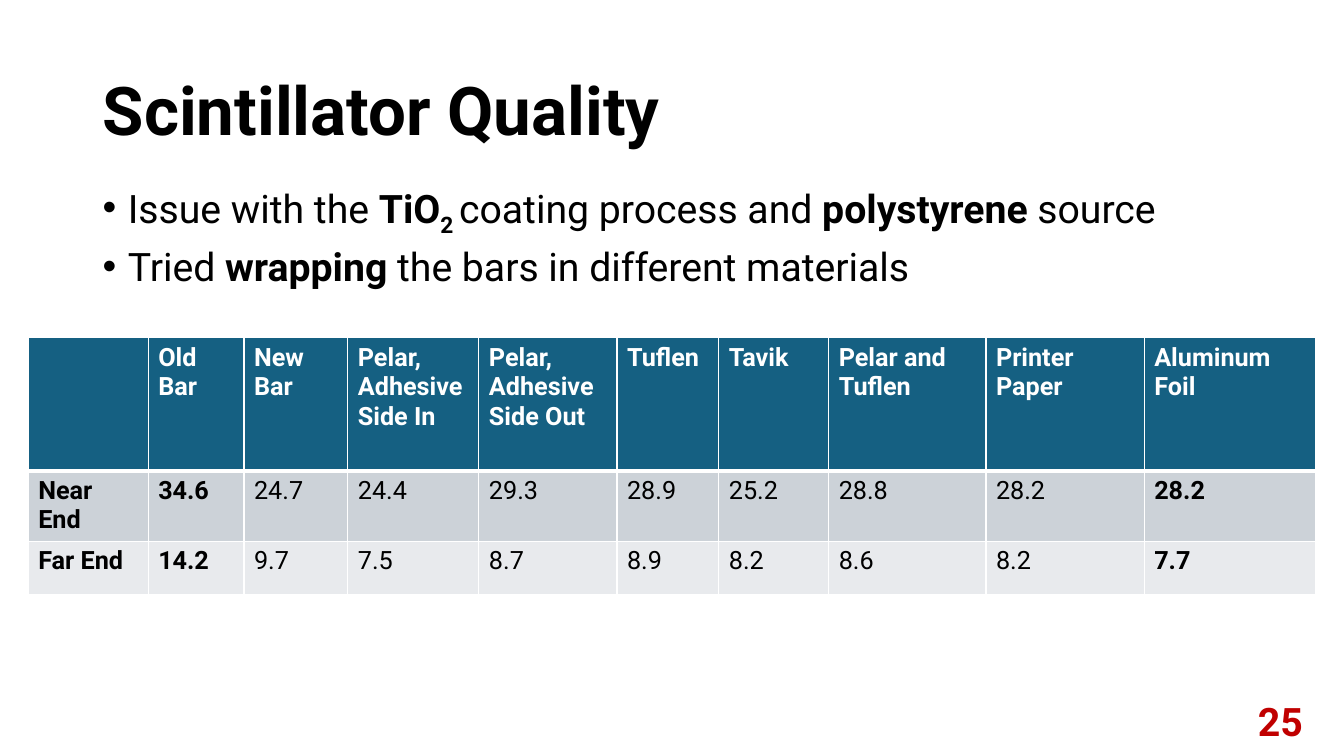
from lxml.etree import SubElement
from pptx import Presentation
from pptx.dml.color import RGBColor
from pptx.enum.text import MSO_ANCHOR, PP_ALIGN
from pptx.oxml.ns import qn
from pptx.util import Inches, Pt

BLACK = RGBColor(0x00, 0x00, 0x00)
WHITE = RGBColor(0xFF, 0xFF, 0xFF)
RED = RGBColor(0xC0, 0x00, 0x00)
TEAL = RGBColor(0x15, 0x60, 0x82)
GRAY = RGBColor(0xCC, 0xD2, 0xD8)
PALE = RGBColor(0xE8, 0xEA, 0xED)
FONT = "Roboto"
WIDE, HIGH = 13.33, 7.5
LEFT, SPAN = 0.92, 11.5

POINTS = [
    [("Issue with the ", ""), ("TiO", "bold"), ("2 ", "bold sub"),
     ("coating process and ", ""), ("polystyrene", "bold"), (" source", "")],
    [("Tried ", ""), ("wrapping", "bold"), (" the bars in different materials", "")],
]
ROWS = [
    ["", "Old Bar", "New Bar", "Pelar, Adhesive Side In", "Pelar, Adhesive Side Out",
     "Tuflen", "Tavik", "Pelar and Tuflen", "Printer Paper", "Aluminum Foil"],
    ["Near End", "34.6", "24.7", "24.4", "29.3", "28.9", "25.2", "28.8", "28.2", "28.2"],
    ["Far End", "14.2", "9.7", "7.5", "8.7", "8.9", "8.2", "8.6", "8.2", "7.7"],
]
COLS = [1.19, 0.95, 1.03, 1.3, 1.37, 1.01, 1.09, 1.56, 1.57, 1.7]
TALL = [1.32, 0.53, 0.53]
FILLS = [TEAL, GRAY, PALE]
STRONG = {0, 1, len(COLS) - 1}


def style(font, size, color, bold):
    """Set the face, size, colour and weight of a font."""
    font.name, font.size, font.bold = FONT, Pt(size), bold
    font.color.rgb = color


def add_title(slide, box):
    """Place the slide title in the box."""
    title = slide.shapes.title
    title.left, title.top, title.width, title.height = map(Inches, box)
    frame = title.text_frame
    frame.text = "Scintillator Quality"
    frame.vertical_anchor = MSO_ANCHOR.MIDDLE
    para = frame.paragraphs[0]
    para.alignment, para.line_spacing = PP_ALIGN.LEFT, 0.9
    style(para.runs[0].font, 48, BLACK, True)


def add_points(slide, box):
    """Place the bulleted points in the box."""
    frame = slide.shapes.add_textbox(*map(Inches, box)).text_frame
    frame.word_wrap = True
    for row, parts in enumerate(POINTS):
        para = frame.add_paragraph() if row else frame.paragraphs[0]
        props = para._p.get_or_add_pPr()
        props.set("marL", str(Inches(0.25)))
        props.set("indent", str(-Inches(0.25)))
        SubElement(props, qn("a:buFont"), typeface="Arial")
        SubElement(props, qn("a:buChar"), char="•")
        para.line_spacing = 0.9
        if row:
            para.space_before = Pt(10)
        for text, look in parts:
            run = para.add_run()
            run.text = text
            style(run.font, 28, BLACK, "bold" in look)
            if "sub" in look:
                run._r.get_or_add_rPr().set("baseline", "-25000")


def edge(cell, side, width):
    """Draw one white border of a cell."""
    line = SubElement(cell._tc.get_or_add_tcPr(), qn("a:ln" + side), w=str(Pt(width)))
    fill = SubElement(line, qn("a:solidFill"))
    SubElement(fill, qn("a:srgbClr"), val=str(WHITE))


def add_grid(slide, left, top):
    """Place the table of light yields with its corner at left, top."""
    size = left, top, sum(COLS), sum(TALL)
    table = slide.shapes.add_table(len(ROWS), len(COLS), *map(Inches, size)).table
    for col, width in zip(table.columns, COLS):
        col.width = Inches(width)
    for row, texts in enumerate(ROWS):
        table.rows[row].height = Inches(TALL[row])
        for col, text in enumerate(texts):
            cell = table.cell(row, col)
            for side in "LRTB":
                thick = (row, side) in [(0, "B"), (1, "T")]
                edge(cell, side, 3 if thick else 1)
            cell.fill.solid()
            cell.fill.fore_color.rgb = FILLS[row]
            cell.text_frame.text = text
            bold = row == 0 or col in STRONG
            style(cell.text_frame.paragraphs[0].font, 18, BLACK if row else WHITE, bold)
            for run in cell.text_frame.paragraphs[0].runs:
                style(run.font, 18, BLACK if row else WHITE, bold)


def add_page(slide, box):
    """Place the page number in the box."""
    frame = slide.shapes.add_textbox(*map(Inches, box)).text_frame
    frame.word_wrap = True
    frame.text = "25"
    frame.vertical_anchor = MSO_ANCHOR.MIDDLE
    para = frame.paragraphs[0]
    para.alignment = PP_ALIGN.RIGHT
    style(para.runs[0].font, 28, RED, True)


def main():
    """Build the slide and save it."""
    deck = Presentation()
    deck.slide_width, deck.slide_height = Inches(WIDE), Inches(HIGH)
    slide = deck.slides.add_slide(deck.slide_layouts[5])
    add_title(slide, (LEFT, 0.4, SPAN, 1.45))
    add_points(slide, (LEFT, 1.79, SPAN, 1.32))
    add_grid(slide, 0.28, 3.35)
    add_page(slide, (10.02, 6.95, 3, 0.4))
    deck.save("out.pptx")


if __name__ == "__main__":
    main()
